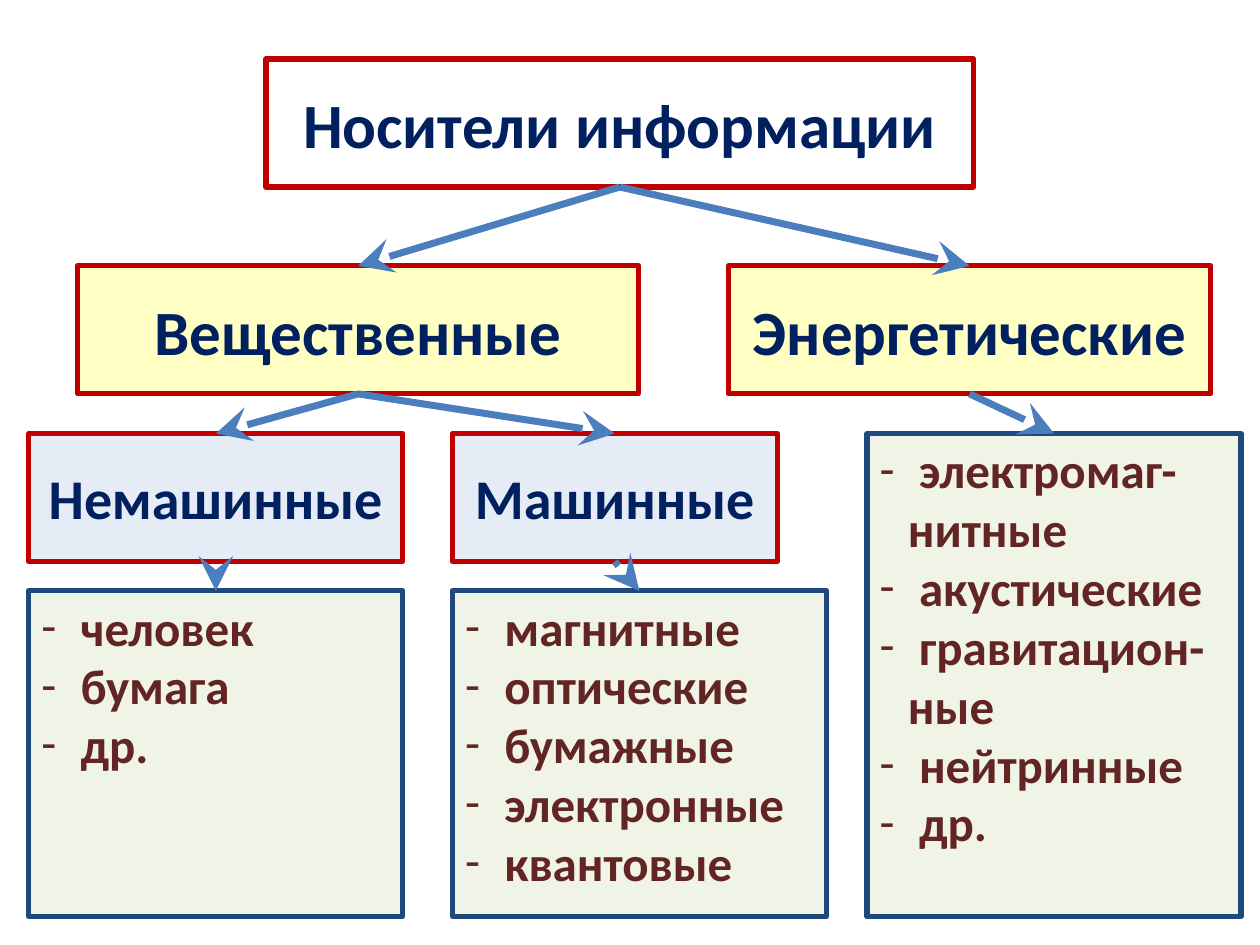
from pptx import Presentation
from pptx import util as u
from pptx.dml.color import RGBColor
from pptx.enum import shapes, text
from pptx.oxml import ns
from lxml import etree

NAVY = RGBColor(0x00, 0x20, 0x60)
BROWN = RGBColor(0x63, 0x25, 0x23)
RED = RGBColor(0xC0, 0x00, 0x00)
BLUE = RGBColor(0x1F, 0x49, 0x7D)
ARROW = RGBColor(0x4B, 0x7E, 0xBC)
YELLOW = RGBColor(0xFF, 0xFF, 0x00)
PALE_BLUE = RGBColor(0xDC, 0xE6, 0xF2)
PALE_GREEN = RGBColor(0xEB, 0xF1, 0xDE)
FONT = "Calibri"

# Content: key, text, left, width (cm); each level shares one top
TITLE = ("carriers", "Носители информации", 5.36, 14.27)
KINDS = [
    ("material", "Вещественные", 1.57, 11.3),
    ("energy", "Энергетические", 14.68, 9.73),
]
SUBKINDS = [
    ("manual", "Немашинные", 0.58, 7.54),
    ("machine", "Машинные", 9.12, 6.55),
]
# Lists: key, placeholder idx, left, top, items
LISTS = [
    ("manual list", 2, 0.58, 11.91, ["человек", "бумага", "др."]),
    ("machine list", 4, 9.12, 11.91,
     ["магнитные", "оптические", "бумажные", "электронные", "квантовые"]),
    ("energy list", 3, 17.48, 8.74,
     ["электромаг-нитные", "акустические", "гравитацион-ные", "нейтринные", "др."]),
]
LINKS = [
    ("carriers", "material"), ("carriers", "energy"),
    ("material", "manual"), ("material", "machine"),
    ("manual", "manual list"), ("machine", "machine list"),
    ("energy", "energy list"),
]
TITLE_TOP, KIND_TOP, SUBKIND_TOP = 1.19, 5.36, 8.74
HEAD_H, LIST_W, LIST_BOTTOM, INDENT = 2.58, 7.54, 18.47, 0.57

prs = Presentation()
prs.slide_width, prs.slide_height = u.Cm(25.4), u.Cm(19.05)
s = prs.slides.add_slide(prs.slide_layouts[4])
holders = {p.placeholder_format.idx: p for p in s.placeholders}
boxes = {}


def sub(parent, tag, **attrs):
    return etree.SubElement(parent, ns.qn(tag), **attrs)


def style_box(sp, place, line, fill=None, opacity=100):
    sp.left, sp.top, sp.width, sp.height = [u.Cm(v) for v in place]
    sp.line.color.rgb = line
    sp.line.width = u.Pt(3)
    if fill is None:
        sp.fill.background()
    else:
        sp.fill.solid()
        sp.fill.fore_color.rgb = fill
        color = sp.fill._xPr.find(".//" + ns.qn("a:srgbClr"))
        sub(color, "a:alpha", val=str(opacity * 1000))
    tf = sp.text_frame
    tf.word_wrap = True
    tf.auto_size = text.MSO_AUTO_SIZE.NONE
    return tf


def add_text(p, words, size, color):
    r = p.add_run()
    r.text = words
    r.font.name, r.font.size, r.font.bold = FONT, u.Pt(size), True
    r.font.color.rgb = color


def add_heading(sp, item, top, size, fill=None, opacity=100):
    key, words, left, width = item
    tf = style_box(sp, (left, top, width, HEAD_H), RED, fill, opacity)
    tf.vertical_anchor = text.MSO_ANCHOR.MIDDLE
    p = tf.paragraphs[0]
    p.alignment = text.PP_ALIGN.CENTER
    add_text(p, words, size, NAVY)
    boxes[key] = sp


# Headings
add_heading(s.shapes.title, TITLE, TITLE_TOP, 36)
for items, top, size, fill, opacity in [
    (KINDS, KIND_TOP, 36, YELLOW, 23),
    (SUBKINDS, SUBKIND_TOP, 32, PALE_BLUE, 73),
]:
    for item in items:
        sp = s.shapes.add_shape(shapes.MSO_SHAPE.RECTANGLE, 0, 0, 0, 0)
        sp.shadow.inherit = False
        add_heading(sp, item, top, size, fill, opacity)

# Lists
for key, idx, left, top, items in LISTS:
    sp = boxes[key] = holders[idx]
    tf = style_box(sp, (left, top, LIST_W, LIST_BOTTOM - top), BLUE, PALE_GREEN, 73)
    tf.vertical_anchor = text.MSO_ANCHOR.TOP
    for i, item in enumerate(items):
        p = tf.add_paragraph() if i else tf.paragraphs[0]
        p.alignment = text.PP_ALIGN.LEFT
        p.space_before = u.Pt(0)
        pPr = p._p.get_or_add_pPr()
        pPr.set("marL", str(u.Cm(INDENT)))
        pPr.set("indent", str(-u.Cm(INDENT)))
        sub(pPr, "a:buFont", typeface=FONT)
        sub(pPr, "a:buChar", char="-")
        add_text(p, " " + item, 28, BROWN)

# The layout's spare text placeholder
spare = holders[1].element
spare.getparent().remove(spare)

# Arrows from bottom centre to top centre
for start, end in LINKS:
    a, b = boxes[start], boxes[end]
    c = s.shapes.add_connector(
        shapes.MSO_CONNECTOR.STRAIGHT,
        a.left + a.width // 2, a.top + a.height, b.left + b.width // 2, b.top)
    c.line.color.rgb = ARROW
    c.line.width = u.Pt(4)
    sub(c.line._get_or_add_ln(), "a:tailEnd", type="stealth", w="lg", len="lg")
    sub(c.element.spPr, "a:effectLst")

prs.save("out.pptx")
